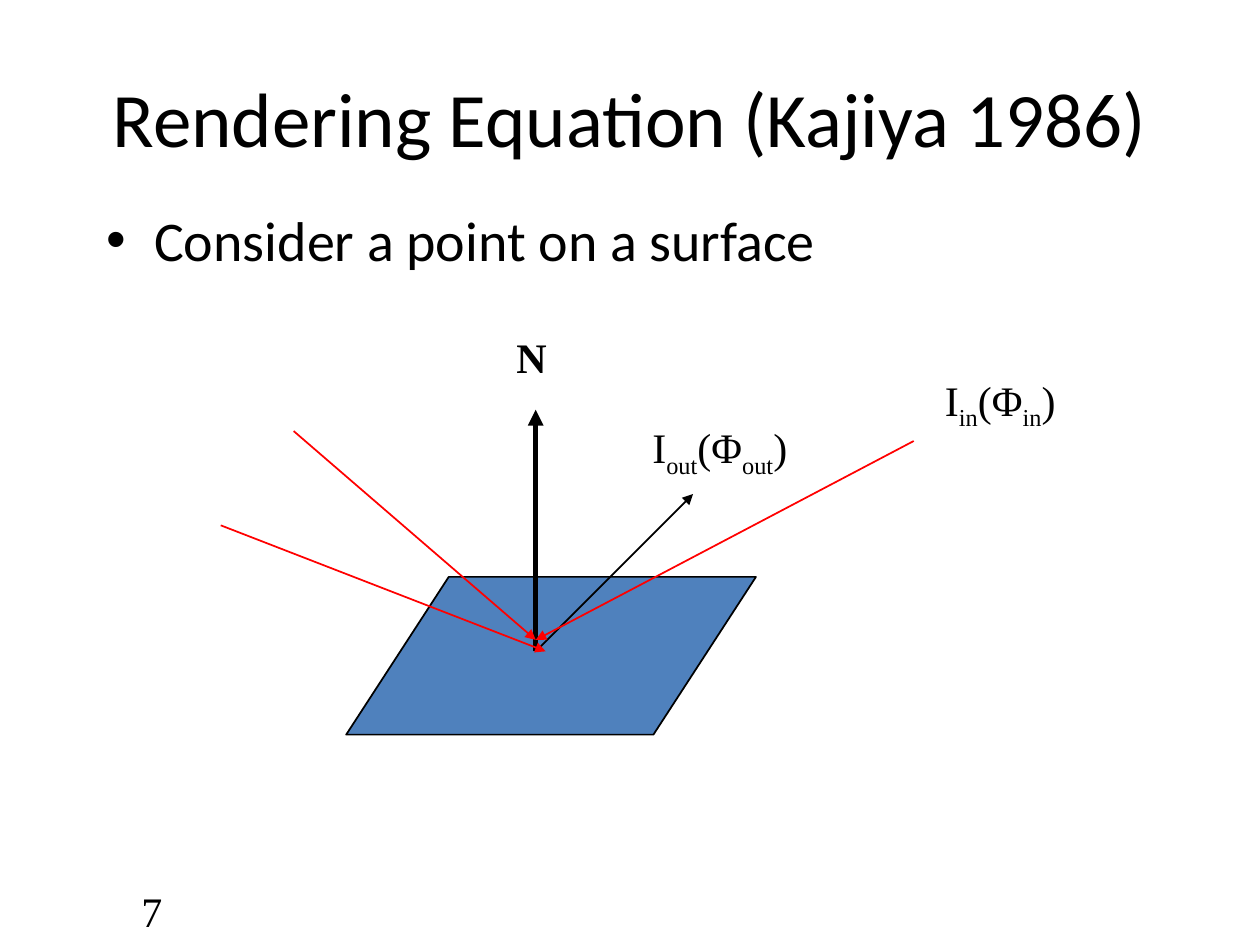
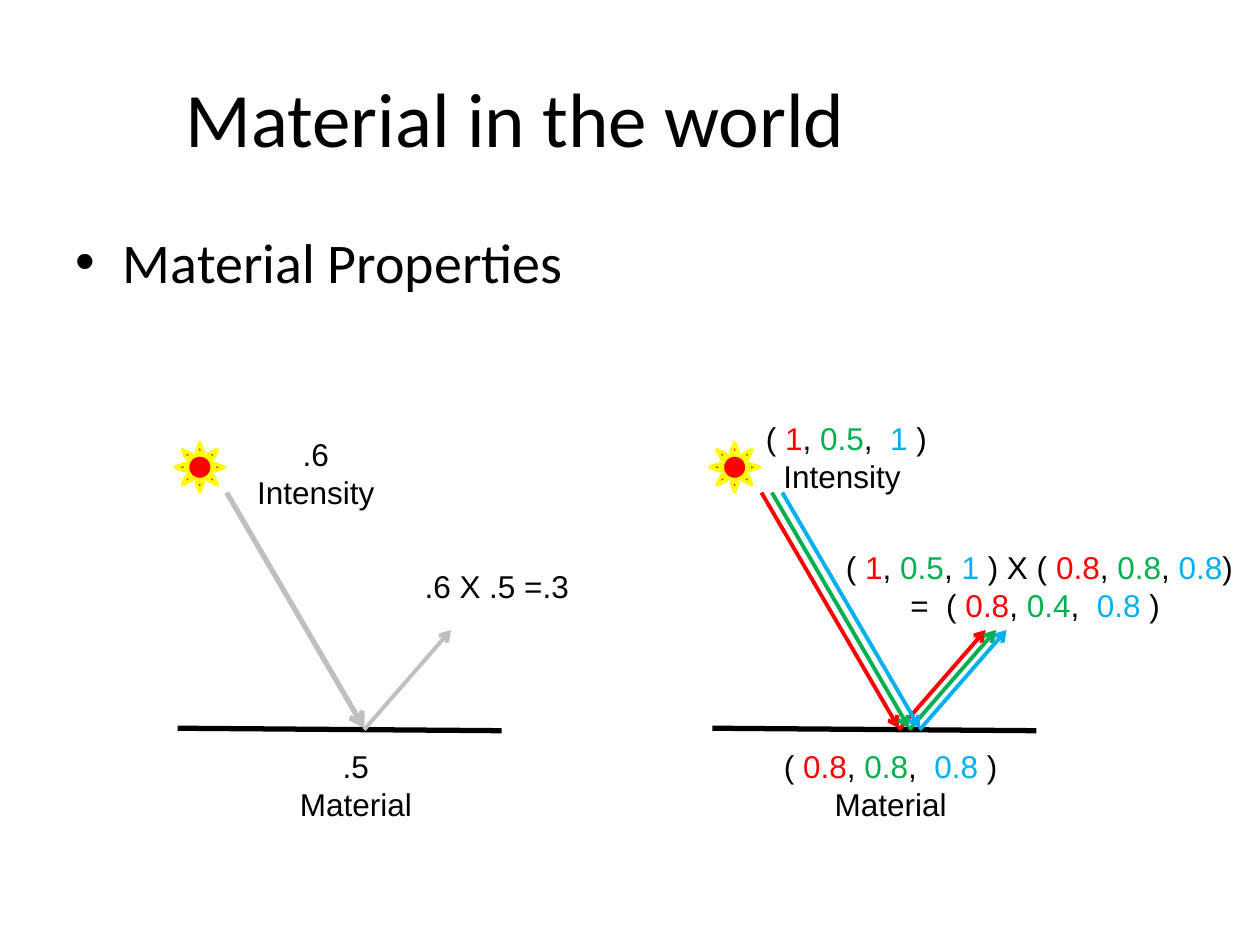
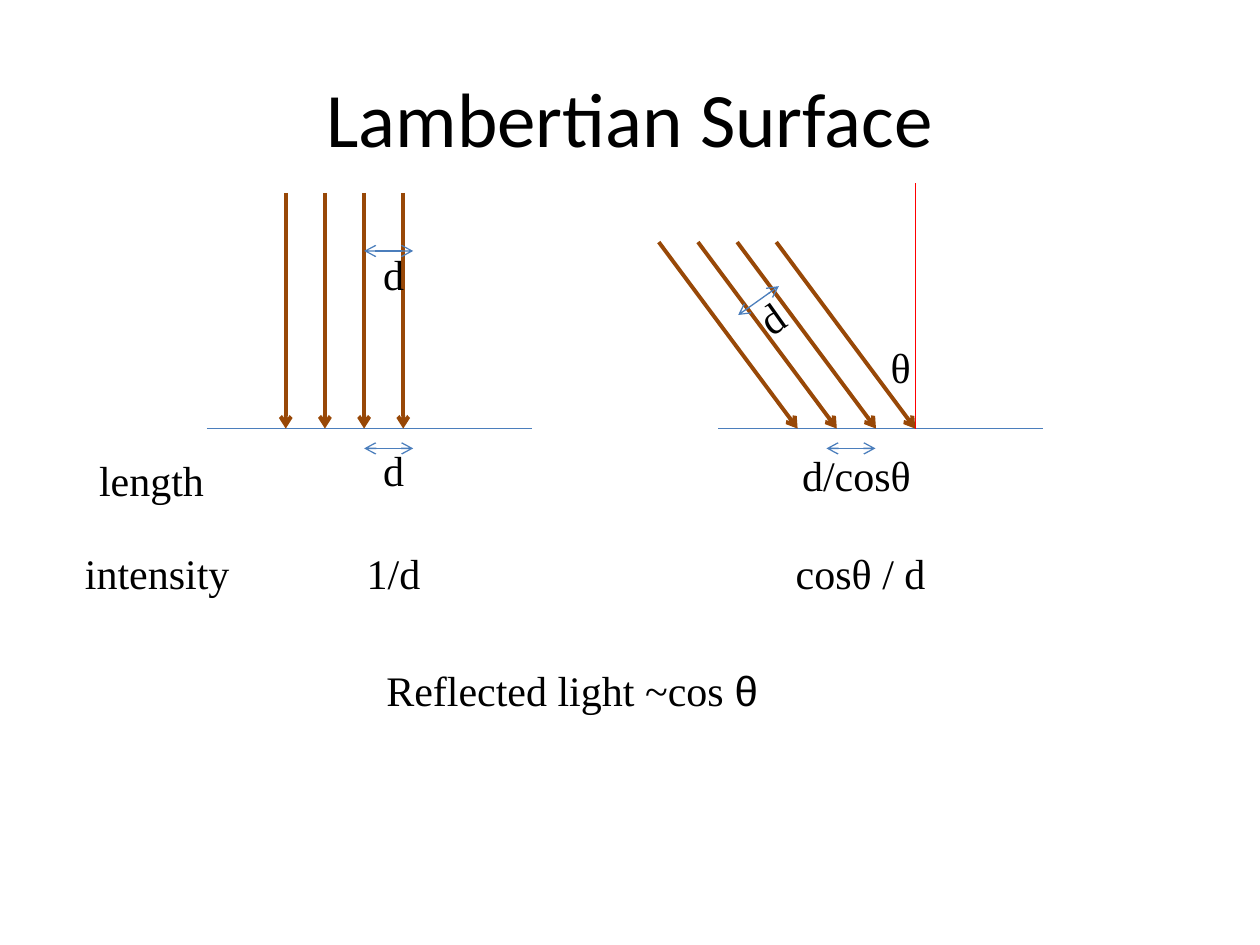
from lxml.etree import SubElement
from pptx import Presentation
from pptx.dml.color import RGBColor
from pptx.enum.shapes import MSO_CONNECTOR, MSO_SHAPE
from pptx.enum.text import MSO_ANCHOR, MSO_AUTO_SIZE, PP_ALIGN
from pptx.oxml.ns import qn
from pptx.util import Cm, Pt

HUES = {
    "ink": "000000",
    "r": "FF0000",
    "g": "00B050",
    "b": "00B0F0",
    "gray": "BFBFBF",
    "sun": "FFFF00",
    "plane": "4F81BD",
    "blue": "4B7EBC",
    "brown": "984807",
}
INK = {name: RGBColor.from_string(code) for name, code in HUES.items()}
SERIF = "Times New Roman"


def draw(slide, start, end, hue, width, tail=None, head=None):
    ends = [Cm(n) for n in (*start, *end)]
    line = slide.shapes.add_connector(MSO_CONNECTOR.STRAIGHT, *ends)
    line.line.color.rgb = INK[hue]
    line.line.width = Pt(width)
    props = line._element.spPr
    stroke = props.find(qn("a:ln"))
    for tag, kind in (("a:headEnd", head), ("a:tailEnd", tail)):
        if kind:
            SubElement(stroke, qn(tag)).set("type", kind)
    SubElement(props, qn("a:effectLst"))


def write(slide, area, text, font=SERIF, size=24, align=PP_ALIGN.CENTER, wrap=True):
    """Every second piece between bars opens with a mark: a hue, _ for subscript, a for Arial."""
    box = slide.shapes.add_textbox(*[Cm(n) for n in area])
    frame = box.text_frame
    frame.word_wrap = wrap
    frame.auto_size = MSO_AUTO_SIZE.SHAPE_TO_FIT_TEXT
    for row, words in enumerate(text.split("\n")):
        para = frame.add_paragraph() if row else frame.paragraphs[0]
        para.alignment = align
        for spot, piece in enumerate(words.split("|")):
            mark = piece[0] if spot % 2 else ""
            run = para.add_run()
            run.text = piece[len(mark):]
            run.font.name = "Arial" if mark == "a" else font
            run.font.size = Pt(size)
            run.font.color.rgb = INK.get(mark, INK["ink"])
            if mark == "_":
                run.font._element.set("baseline", "-25000")
    return box


deck = Presentation()
deck.slide_width = Cm(25.4)
deck.slide_height = Cm(19.05)

plans = [
    ("Rendering Equation (Kajiya 1986)", 22.86,
     "Consider a point on a surface", (1.9, 4.02, 21.38, 11.22)),
    ("Material in the world", 18.24,
     "Material Properties", (1.27, 4.45, 22.86, 12.57)),
    ("Lambertian Surface", 22.86, None, None),
]
slides = []
for title, width, point, area in plans:
    slide = deck.slides.add_slide(deck.slide_layouts[1 if point else 5])
    items = [(slide.shapes.title, title, (1.27, 0.76, width, 3.18), 44)]
    if point:
        items.append((slide.placeholders[1], point, area, 32))
    for holder, text, place, size in items:
        holder.left, holder.top, holder.width, holder.height = [Cm(n) for n in place]
        holder.text_frame.text = text
        font = holder.text_frame.paragraphs[0].runs[0].font
        font.name = "Calibri"
        font.size = Pt(size)
        font.color.rgb = INK["ink"]
    slides.append(slide)
render, matter, lambert = slides

number = write(render, (1.27, 17.98, 5.92, 0.76), "7", align=PP_ALIGN.LEFT)
number.text_frame.auto_size = MSO_AUTO_SIZE.NONE
number.text_frame.vertical_anchor = MSO_ANCHOR.MIDDLE
number.text_frame.margin_left = Cm(1.58)

plane = render.shapes.add_shape(
    MSO_SHAPE.PARALLELOGRAM, Cm(6.98), Cm(11.63), Cm(8.26), Cm(3.18))
plane.adjustments[0] = 0.65
plane.shadow.inherit = False
plane.fill.solid()
plane.fill.fore_color.rgb = INK["plane"]
plane.line.color.rgb = INK["ink"]
plane.line.width = Pt(1)

foot = (10.8, 13.13)
hit = (10.8, 12.9)
for start, end, hue, width in [
    (foot, (10.8, 8.26), "ink", 3),
    (foot, (13.97, 9.96), "ink", 1),
    ((5.92, 8.69), hit, "r", 1),
    ((4.45, 10.59), (11, 13.13), "r", 1),
    ((18.42, 8.89), hit, "r", 1),
]:
    draw(render, start, end, hue, width, "triangle")

for area, text in [
    ((10.16, 6.55, 1.12, 1.27), "N"),
    ((12.9, 8.38, 3.43, 1.27), "I|_out|(Φ|_out|)"),
    ((18.8, 7.42, 2.84, 1.27), "I|_in|(Φ|_in|)"),
]:
    label = write(render, area, text, align=PP_ALIGN.LEFT, wrap=False)
    label.text_frame.paragraphs[0].runs[0].font.bold = text == "N"

for left, hues, width in [(0, ["gray"], 3), (10.78, ["r", "g", "b"], 2.25)]:
    draw(matter, (3.58 + left, 14.68), (10.11 + left, 14.73), "ink", 3)
    sun = matter.shapes.add_shape(
        MSO_SHAPE.SUN, Cm(3.53 + left), Cm(8.92), Cm(1), Cm(1))
    sun.shadow.inherit = False
    sun.fill.solid()
    sun.fill.fore_color.rgb = INK["r"]
    sun.line.color.rgb = INK["sun"]
    sun.line.width = Pt(2)
    for step, hue in enumerate(hues):
        shift = left + 0.21 * step
        draw(matter, (4.57 + shift, 9.93), (7.34 + shift, 14.68), hue, width, "arrow")
        draw(matter, (7.34 + shift, 14.71), (9.09 + shift, 12.7), hue, 2.25, "arrow")

for area, text in [
    ((3.89, 8.64, 4.95, 1.8), " .6 \nIntensity"),
    ((7.54, 11.3, 4.95, 1.02), ".6 X .5 =.3"),
    ((4.7, 14.94, 4.95, 1.8), ".5\nMaterial"),
    ((14.5, 8.33, 4.95, 1.8), " ( |r1|, |g0.5|,  |b1| )\nIntensity"),
    ((16.51, 10.92, 8.89, 1.8),
     " ( |r1|, |g0.5|, |b1| ) X ( |r0.8|, |g0.8|, |b0.8|) \n"
     "=  ( |r0.8|, |g0.4|,  |b0.8| ) "),
    ((15.48, 14.94, 4.95, 1.8), "( |r0.8|, |g0.8|,  |b0.8| ) Material"),
]:
    write(matter, area, text, "Arial", 18)

base = 8.64
for left in (4.17, 14.48):
    draw(lambert, (left, base), (left + 6.55, base), "blue", 0.75)
for top, start, end in [(3.89, 5.76, 5.76), (4.88, 13.28, 16.08)]:
    for step in range(4):
        shift = 0.79 * step
        draw(lambert, (start + shift, top), (end + shift, base), "brown", 2.25, "arrow")
draw(lambert, (18.46, base), (18.46, 3.68), "r", 0.75)
for start, end in [
    ((16.66, 9.04), (17.65, 9.04)),
    ((7.34, 9.04), (8.33, 9.04)),
    ((7.34, 5.06), (8.33, 5.06)),
    ((14.88, 6.35), (15.7, 5.77)),
]:
    draw(lambert, start, end, "blue", 0.75, "arrow", "arrow")

for left, top, width, text in [
    (6.55, 8.84, 2.77, "d"),
    (6.55, 4.88, 2.77, "d"),
    (15.88, 8.94, 2.77, "d/cosθ"),
    (17.27, 6.76, 1.78, "θ"),
    (1.57, 9.04, 2.97, "length"),
    (1.19, 10.92, 3.96, "intensity"),
    (6.55, 10.92, 2.77, "1/d"),
    (15.47, 10.92, 3.76, "cosθ / d"),
]:
    write(lambert, (left, top, width, 1.3), text)
gap = write(lambert, (14.17, 5.77, 2.77, 1.27), "d")
gap.rotation = 324.6
write(lambert, (7.54, 13.28, 10.31, 1.3), "Reflected light ~cos |aθ", align=PP_ALIGN.LEFT)

deck.save("out.pptx")
